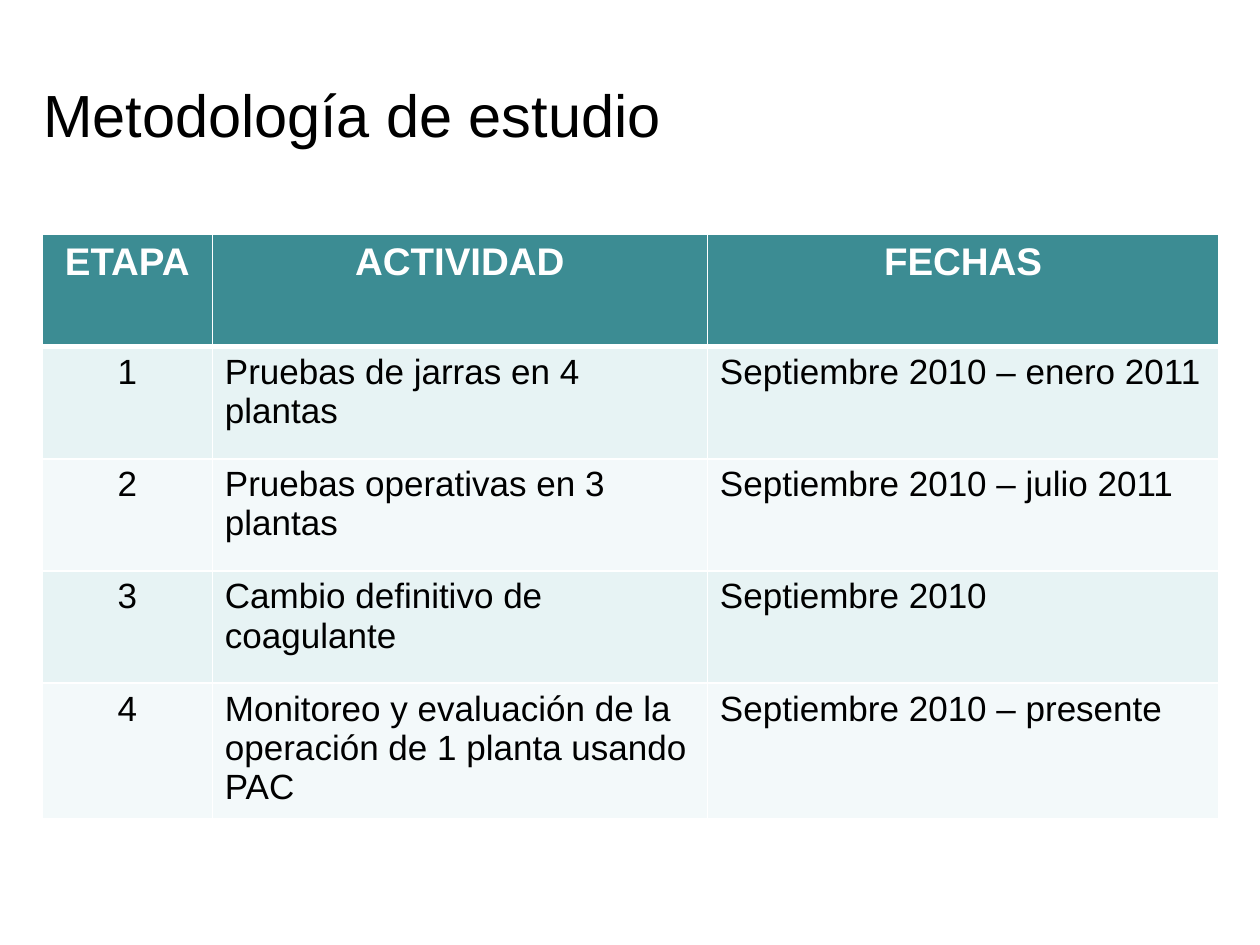
import pptx
import pptx.dml.color
import pptx.enum.text
import pptx.oxml
import pptx.oxml.ns
import pptx.util
from pptx.util import Cm

COLORS = {
    "header": "3C8C93",
    "odd": "E7F3F4",
    "even": "F3F9FA",
    "white": "FFFFFF",
    "black": "000000",
}
ALIGN = pptx.enum.text.PP_ALIGN
TITLE_FORMAT = {"name": "Arial", "size": pptx.util.Pt(34), "bold": False}
HEADER_FORMAT = {"name": "Arial", "size": pptx.util.Pt(22), "bold": True}
BODY_FORMAT = {"name": "Arial", "size": pptx.util.Pt(20), "bold": False}

COLUMN_WIDTHS = [3.43, 9.98, 10.31]
ROW_HEIGHTS = [2.26, 2.26, 2.26, 2.26, 2.74]
STAGES = [
    ("ETAPA", "ACTIVIDAD", "FECHAS"),
    ("1", "Pruebas de jarras en 4 plantas", "Septiembre 2010 – enero 2011"),
    ("2", "Pruebas operativas en 3 plantas", "Septiembre 2010 – julio 2011"),
    ("3", "Cambio definitivo de coagulante", "Septiembre 2010"),
    ("4", "Monitoreo y evaluación de la operación de 1 planta usando PAC",
     "Septiembre 2010 – presente"),
]


def rgb(name):
    """Return the named palette colour."""
    return pptx.dml.color.RGBColor.from_string(COLORS[name])


def write_text(text_frame, text, alignment, color, font_format):
    """Write one formatted paragraph into a text frame."""
    paragraph = text_frame.paragraphs[0]
    paragraph.alignment = alignment
    run = paragraph.add_run()
    run.text = text
    for attribute, value in font_format.items():
        setattr(run.font, attribute, value)
    run.font.color.rgb = rgb(color)


def add_borders(cell, widths):
    """Draw white cell borders with the given widths in points by side."""
    properties = cell._tc.get_or_add_tcPr()
    for side, width in widths.items():
        properties.append(pptx.oxml.parse_xml(
            f'<a:ln{side} {pptx.oxml.ns.nsdecls("a")} w="{pptx.util.Pt(width)}">'
            f'<a:solidFill><a:srgbClr val="{COLORS["white"]}"/></a:solidFill>'
            f'</a:ln{side}>'))


def place_title(slide, left, top, width, height):
    """Place the title placeholder in the given box."""
    title = slide.shapes.title
    box = {"left": left, "top": top, "width": width, "height": height}
    for attribute, value in box.items():
        setattr(title, attribute, value)
    frame_format = {
        "word_wrap": True,
        "auto_size": pptx.enum.text.MSO_AUTO_SIZE.NONE,
        "vertical_anchor": pptx.enum.text.MSO_ANCHOR.TOP,
        "margin_left": Cm(0.18),
        "margin_top": Cm(0.25),
    }
    for attribute, value in frame_format.items():
        setattr(title.text_frame, attribute, value)
    write_text(title.text_frame, "Metodología de estudio", ALIGN.LEFT,
               "black", TITLE_FORMAT)


def place_stage_table(slide, left, top, width, height):
    """Place the table of study stages in the given box."""
    table = slide.shapes.add_table(
        len(STAGES), len(COLUMN_WIDTHS), left, top, width, height).table
    for column, share in zip(table.columns, COLUMN_WIDTHS):
        column.width = int(width * share / sum(COLUMN_WIDTHS))
    for row, share in zip(table.rows, ROW_HEIGHTS):
        row.height = int(height * share / sum(ROW_HEIGHTS))
    for row_index, texts in enumerate(STAGES):
        is_header = row_index == 0
        fill = "header" if is_header else "odd" if row_index % 2 else "even"
        for column_index, text in enumerate(texts):
            cell = table.cell(row_index, column_index)
            add_borders(cell, {"L": 1, "R": 1,
                               "T": 3 if row_index == 1 else 1,
                               "B": 3 if is_header else 1})
            cell.fill.solid()
            cell.fill.fore_color.rgb = rgb(fill)
            centered = is_header or column_index == 0
            write_text(cell.text_frame, text,
                       ALIGN.CENTER if centered else ALIGN.LEFT,
                       "white" if is_header else "black",
                       HEADER_FORMAT if is_header else BODY_FORMAT)


def main():
    """Build and save the methodology slide."""
    presentation = pptx.Presentation()
    presentation.slide_width = Cm(25.4)
    presentation.slide_height = Cm(19.05)
    slide = presentation.slides.add_slide(presentation.slide_layouts[5])
    place_title(slide, Cm(0.69), Cm(1.32), Cm(17.4), Cm(2.41))
    place_stage_table(slide, Cm(0.85), Cm(4.73),
                      Cm(sum(COLUMN_WIDTHS)), Cm(sum(ROW_HEIGHTS)))
    presentation.save("out.pptx")


if __name__ == "__main__":
    main()
